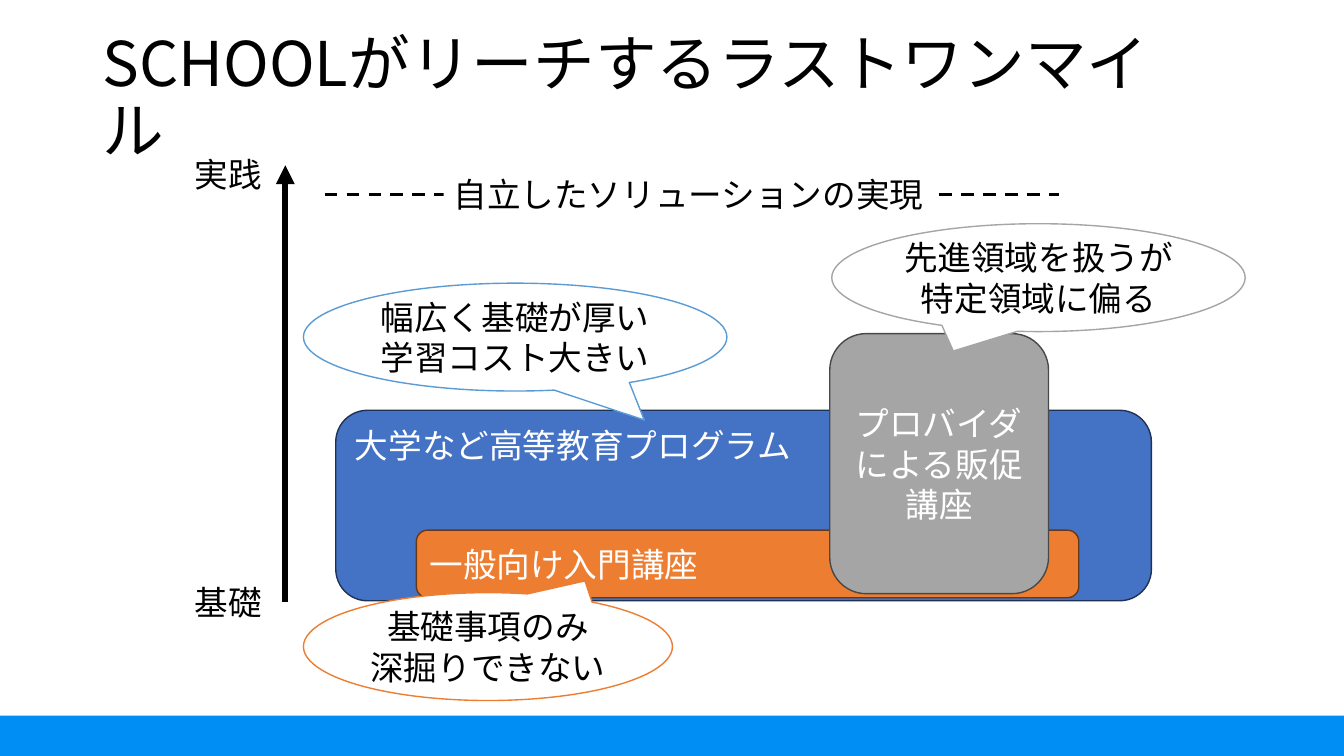
from lxml import etree
from pptx import Presentation
from pptx.dml.color import RGBColor
from pptx.enum import dml, shapes, text
from pptx.oxml.ns import qn
from pptx.util import Inches, Pt

FONT = "Noto Sans CJK JP"
S, A = shapes.MSO_SHAPE, text.PP_ALIGN
TOP, MIDDLE = text.MSO_ANCHOR.TOP, text.MSO_ANCHOR.MIDDLE


def color(value):
    return RGBColor.from_string(value)


def write(sp, lines, size=24, ink="000000", align=A.LEFT, anchor=TOP, wrap=True, spacing=None):
    tf = sp.text_frame
    for name, value in {"word_wrap": wrap, "vertical_anchor": anchor}.items():
        setattr(tf, name, value)
    for i, line in enumerate(lines):
        p = tf.add_paragraph() if i else tf.paragraphs[0]
        for name, value in {"alignment": align, "line_spacing": spacing}.items():
            setattr(p, name, value)
        r = p.add_run()
        r.text = line
        for name, value in {"name": FONT, "size": Pt(size)}.items():
            setattr(r.font, name, value)
        r.font.color.rgb = color(ink)
        # East Asian typeface for the Japanese glyphs
        etree.SubElement(r.font._element, qn("a:ea"), typeface=FONT)


def add_shape(s, kind, box, fill, outline=None, adjust=()):
    sp = s.shapes.add_shape(kind, *map(Inches, box))
    sp.shadow.inherit = False
    sp.fill.solid()
    sp.fill.fore_color.rgb = color(fill)
    if outline:
        sp.line.color.rgb = color(outline)
        sp.line.width = Pt(1)
    else:
        sp.line.fill.background()
    for i, value in enumerate(adjust):
        sp.adjustments[i] = value
    return sp


def add_text(s, box, lines, **style):
    write(s.shapes.add_textbox(*map(Inches, box)), lines, **style)


def add_line(s, start, end, width):
    line = s.shapes.add_connector(shapes.MSO_CONNECTOR.STRAIGHT, *map(Inches, start + end))
    line.line.color.rgb = color("000000")
    line.line.width = Pt(width)
    etree.SubElement(line._element.spPr, qn("a:effectLst"))
    return line


def add_callout(s, box, outline, tip, lines):
    sp = add_shape(s, S.OVAL_CALLOUT, box, "FFFFFF", outline, tip)
    write(sp, lines, align=A.CENTER, anchor=MIDDLE)


def add_program(s, box, fill, outline, name, **style):
    sp = add_shape(s, S.ROUNDED_RECTANGLE, box, fill, outline)
    write(sp, [name], ink="FFFFFF", **style)


def add_frame(s, width, height):
    """Footer band and title."""
    band = 0.4
    add_shape(s, S.RECTANGLE, (0, height - band, width, band), "018EF4")
    add_text(s, (0.92, 0.48, 10.83, 1.03), ["SCHOOLがリーチするラストワンマイル"],
             size=44, anchor=MIDDLE, spacing=0.9)


def add_programs(s, x, y):
    """Overlapping programs and their callouts, from back to front."""
    add_program(s, (x + 0.32, y + 1.85, 8.09, 1.89), "4472C4", "1E3256",
                "大学など高等教育プログラム")
    add_callout(s, (x, y + 0.59, 4.2, 1.07), "5B9BD5", (0.305, 0.769),
                ["幅広く基礎が厚い", "学習コスト大きい"])
    add_program(s, (x + 1.12, y + 3.04, 6.57, 0.67), "ED7D31", "683715",
                "一般向け入門講座", anchor=MIDDLE)
    add_callout(s, (x, y + 3.66, 3.66, 1.07), "ED7D31", (0.263, -0.609),
                ["基礎事項のみ", "深掘りできない"])
    add_program(s, (x + 5.22, y + 1.09, 2.17, 2.58), "A5A5A5", "484848",
                "プロバイダによる販促講座", align=A.CENTER, anchor=MIDDLE)
    add_callout(s, (x + 5.24, y, 4.1, 1.07), "A5A5A5", (-0.206, 0.68),
                ["先進領域を扱うが特定領域に偏る"])


def add_axis(s, x, top, bottom):
    """Upward arrow from basics to practice."""
    axis = add_line(s, (x, bottom), (x, top), 4.5)
    etree.SubElement(axis.line._get_or_add_ln(), qn("a:tailEnd"), type="triangle")
    for label, y in (("基礎", bottom - 0.25), ("実践", top - 0.16)):
        add_text(s, (x - 1, y, 0.88, 0.5), [label], wrap=False)


def add_goal(s, x, y, width):
    """Dashed goal level with its label on top."""
    level = add_line(s, (x, y), (x + width, y), 2.25)
    level.line.dash_style = dml.MSO_LINE.DASH
    label = add_shape(s, S.RECTANGLE, (x + 1.18, y - 0.25, 4.91, 0.5), "FFFFFF")
    write(label, ["自立したソリューションの実現"], wrap=False)


def main():
    prs = Presentation()
    prs.slide_width, prs.slide_height = Inches(13.33), Inches(7.5)
    s = prs.slides.add_slide(prs.slide_layouts[6])
    add_frame(s, 13.33, 7.5)
    add_programs(s, 3.01, 2.22)
    add_axis(s, 2.83, 1.64, 5.97)
    add_goal(s, 3.22, 1.93, 7.28)
    prs.save("out.pptx")


if __name__ == "__main__":
    main()
